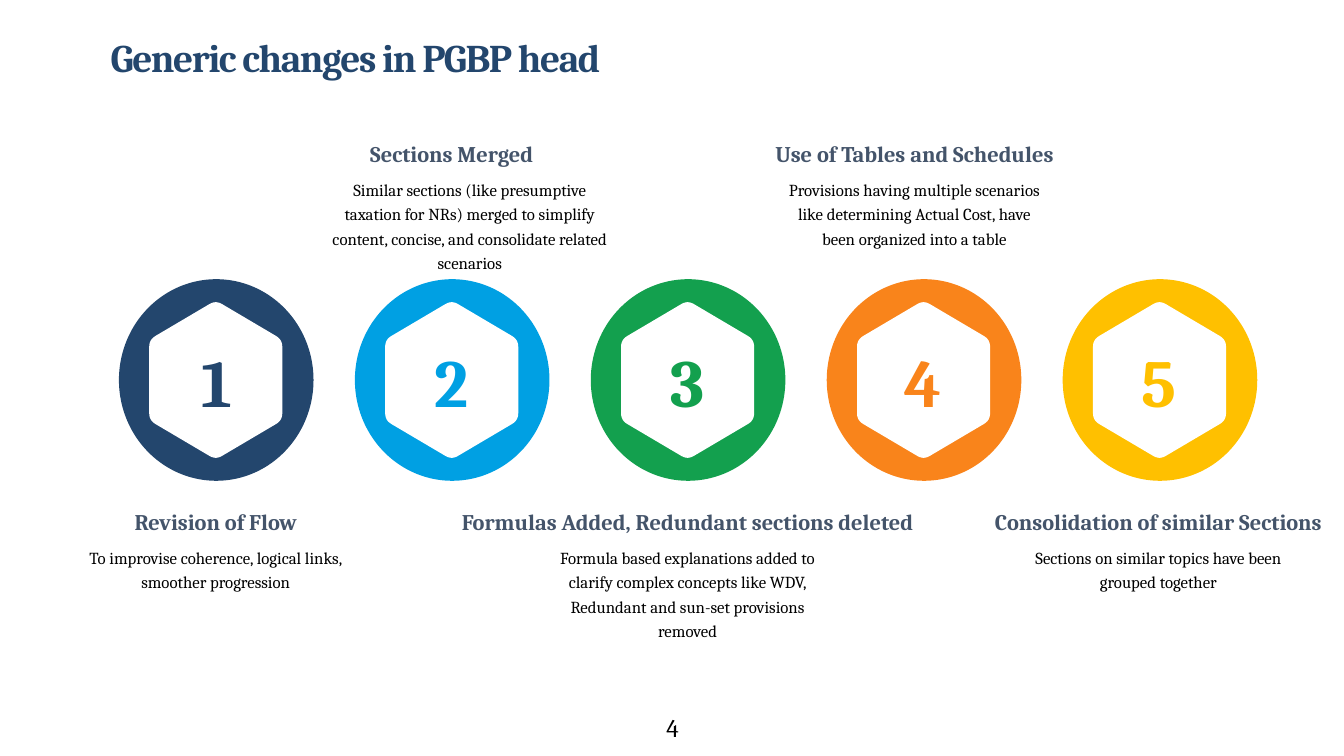
import pptx
import pptx.util
import pptx.dml.color
import pptx.enum.shapes
import pptx.enum.text

SCALE = 9144  # EMU in one px, 100 px to the inch
FONT = "Cambria"
ALIGN = pptx.enum.text.PP_ALIGN
ANCHOR = pptx.enum.text.MSO_ANCHOR

# Circle centres
FIRST, PITCH, MID = 214, 234, 377

# colour, digit width, head, head width, head centre,
# body, body width, body height, body centre
STEPS = [
    ("23466D", 48, "Revision of Flow", 195, 214,
     "To improvise coherence, logical links, smoother progression",
     264, 53, 214),
    ("00A0E3", 56, "Sections Merged", 199, 448,
     "Similar sections (like presumptive taxation for NRs) merged to "
     "simplify content, concise, and consolidate related scenarios",
     300, 104, 466),
    ("13A04E", 58, "Formulas Added, Redundant sections deleted", 501, 682,
     "Formula based explanations added to clarify complex concepts like "
     "WDV, Redundant and sun-set provisions removed",
     264, 104, 682),
    ("F9841B", 57, "Use of Tables and Schedules", 320, 907,
     "Provisions having multiple scenarios like determining Actual Cost, "
     "have been organized into a table",
     264, 104, 907),
    ("FFC000", 56, "Consolidation of similar Sections", 375, 1149,
     "Sections on similar topics have been grouped together",
     264, 53, 1149),
]


def px(num):
    return pptx.util.Emu(round(num * SCALE))


def tint(code):
    return pptx.dml.color.RGBColor.from_string(code)


def paint(shape, color):
    shape.shadow.inherit = False
    shape.fill.solid()
    shape.fill.fore_color.rgb = tint(color)
    shape.line.fill.background()


def write(slide, text, left, top, width, height, *, size, color="000000",
          bold=False, align=ALIGN.CENTER, anchor=ANCHOR.TOP, wrap=True,
          inset=(10, 5), lead=None, track=None):
    box = slide.shapes.add_textbox(px(left), px(top), px(width), px(height))
    frame = box.text_frame
    frame.word_wrap = wrap
    frame.vertical_anchor = anchor
    frame.margin_left = frame.margin_right = px(inset[0])
    frame.margin_top = frame.margin_bottom = px(inset[1])
    para = frame.paragraphs[0]
    para.alignment = align
    if lead:
        para.line_spacing = lead
    run = para.add_run()
    run.text = text
    run.font.name = FONT
    run.font.size = pptx.util.Pt(size)
    run.font.bold = bold
    run.font.color.rgb = tint(color)
    if track:
        run._r.get_or_add_rPr().set("spc", str(track))


def disc(slide, mid, color):
    oval = slide.shapes.add_shape(
        pptx.enum.shapes.MSO_SHAPE.OVAL,
        px(mid - 96), px(MID - 100), px(193), px(200))
    paint(oval, color)


def toward(start, end, cut):
    """Point at a distance of cut from start on the way to end."""
    dx, dy = end[0] - start[0], end[1] - start[1]
    part = cut / (dx * dx + dy * dy) ** 0.5
    return start[0] + dx * part, start[1] + dy * part


def hexagon(slide, mid):
    tips = [(0, -79), (66, -40), (66, 40), (0, 79), (-66, 40), (-66, -40)]
    dots = []
    for num, tip in enumerate(tips):
        a = toward(tip, tips[num - 1], 7)
        b = toward(tip, tips[(num + 1) % 6], 7)
        for step in range(7):  # round the corner
            t = step / 6
            x, y = ((1 - t) ** 2 * a[k] + 2 * t * (1 - t) * tip[k]
                    + t * t * b[k] for k in (0, 1))
            dots.append((px(mid + x), px(MID + y)))
    path = slide.shapes.build_freeform(*dots[0], scale=1.0)
    path.add_line_segments(dots[1:], close=True)
    paint(path.convert_to_shape(), "FFFFFF")


def main():
    deck = pptx.Presentation()
    deck.slide_width, deck.slide_height = px(1333), px(750)
    slide = deck.slides.add_slide(deck.slide_layouts[6])

    # Title
    write(slide, "Generic changes in PGBP head", 100, 17, 1150, 85, size=28,
          color="23466D", bold=True, align=ALIGN.LEFT, anchor=ANCHOR.MIDDLE,
          lead=0.9, track=-100)

    # Steps, with text below and above in turn
    for num, step in enumerate(STEPS):
        color, wide, head, head_w, head_x, body, body_w, body_h, body_x = step
        mid = FIRST + num * PITCH
        top = 134 if num % 2 else 499
        disc(slide, mid, color)
        hexagon(slide, mid)
        write(slide, str(num + 1), mid - wide / 2, 332, wide, 91, size=48,
              color=color, bold=True, anchor=ANCHOR.MIDDLE, wrap=False)
        write(slide, head, head_x - head_w / 2, top, head_w, 37, size=16,
              color="44546A", bold=True, anchor=ANCHOR.BOTTOM, wrap=False)
        write(slide, body, body_x - body_w / 2, top + 37, body_w, body_h,
              size=12, inset=(5, 3), lead=pptx.util.Pt(17.5))

    # Page number
    write(slide, "4", 517, 702, 300, 40, size=18)

    deck.save("out.pptx")


if __name__ == "__main__":
    main()
